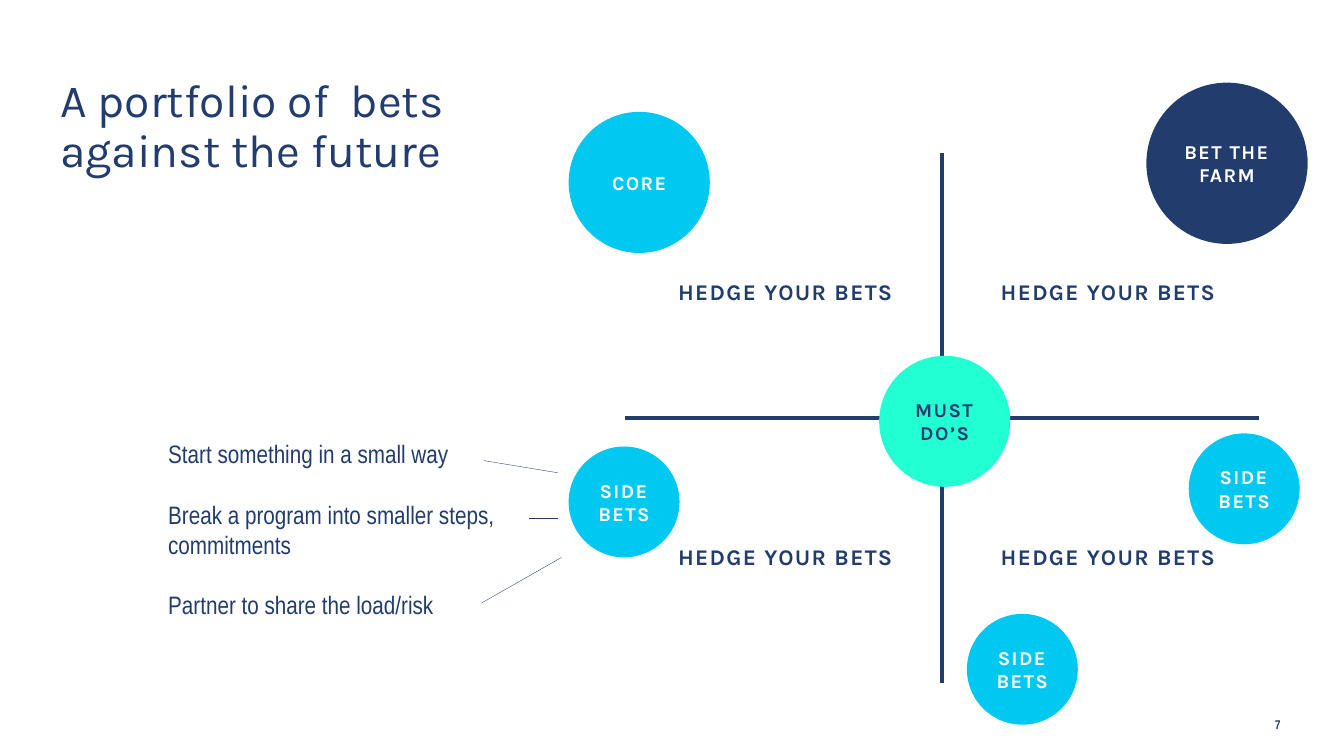
from dataclasses import dataclass
from itertools import product

from lxml.etree import SubElement
from pptx import Presentation
from pptx.dml.color import RGBColor as RGB
from pptx.enum.shapes import MSO_CONNECTOR as Link, MSO_SHAPE as Shape
from pptx.enum.text import MSO_ANCHOR as Anchor, PP_ALIGN as Align
from pptx.oxml.ns import qn
from pptx.util import Inches, Pt


@dataclass(frozen=True)
class Theme:
    navy: RGB = RGB(0x22, 0x3C, 0x6E)
    cyan: RGB = RGB(0x00, 0xC8, 0xF1)
    mint: RGB = RGB(0x22, 0xFF, 0xD2)
    white: RGB = RGB(0xFF, 0xFF, 0xFF)
    head: str = "Karla"
    body: str = "Arial Narrow"
    title: float = 33
    note: float = 18
    hedge: float = 16
    label: float = 14
    page: float = 9
    axis: float = 3
    hair: float = 0.25


THEME = Theme()


def write(frame, *lines, size, font=THEME.head, color=THEME.navy, bold=False,
          align=Align.LEFT, anchor=Anchor.TOP, inset=None, track=0,
          gap=0, lead=None):
    """Fill a text frame with one paragraph per line; track and gap are points."""
    frame.word_wrap = True
    frame.vertical_anchor = anchor
    if inset is not None:
        frame.margin_left = frame.margin_right = Inches(inset)
        frame.margin_top = frame.margin_bottom = Inches(inset)
    for i, line in enumerate(lines):
        para = frame.add_paragraph() if i else frame.paragraphs[0]
        para.text = line
        para.alignment = align
        para.space_after = Pt(gap)
        if lead:
            para.line_spacing = lead
        for run in para.runs:
            run.font.size = Pt(size)
            run.font.name = font
            run.font.bold = bold
            run.font.color.rgb = color
            if track:
                run._r.get_or_add_rPr().set("spc", str(track * 100))


def add_text(slide, box, *lines, **style):
    shape = slide.shapes.add_textbox(*map(Inches, box))
    write(shape.text_frame, *lines, **style)


def add_line(slide, start, end, width):
    line = slide.shapes.add_connector(Link.STRAIGHT, *map(Inches, start + end))
    line.line.color.rgb = THEME.navy
    line.line.width = Pt(width)
    SubElement(line._element.spPr, qn("a:effectLst"))


def add_bet(slide, left, top, size, text, fill, color=THEME.white):
    """Draw a round bet with its label inside."""
    disc = slide.shapes.add_shape(
        Shape.OVAL, *map(Inches, (left, top, size, size)))
    disc.shadow.inherit = False
    disc.fill.solid()
    disc.fill.fore_color.rgb = fill
    disc.line.fill.background()
    write(disc.text_frame, text, size=THEME.label, color=color, bold=True,
          align=Align.CENTER, anchor=Anchor.MIDDLE, inset=0, track=1)


def main():
    deck = Presentation()
    deck.slide_width, deck.slide_height = Inches(13.33), Inches(7.5)
    slide = deck.slides.add_slide(deck.slide_layouts[6])

    add_text(slide, (0.5, 0.72, 4.31, 2.87),
             "A portfolio of  bets against the future",
             size=THEME.title, lead=0.9)

    add_line(slide, (9.34, 1.52), (9.34, 6.78), THEME.axis)
    add_line(slide, (6.2, 4.15), (12.49, 4.15), THEME.axis)

    for left, top in product((6.49, 9.69), (2.72, 5.35)):
        add_text(slide, (left, top, 2.6, 0.35), "HEDGE YOUR BETS",
                 size=THEME.hedge, bold=True, align=Align.CENTER,
                 anchor=Anchor.MIDDLE, inset=0.04, track=1)

    add_bet(slide, 11.37, 0.82, 1.6, "BET THE FARM", THEME.navy)
    add_bet(slide, 5.64, 1.11, 1.4, "CORE", THEME.cyan)
    add_bet(slide, 8.72, 3.53, 1.3, "MUST DO’S", THEME.mint, THEME.navy)
    for left, top in ((11.79, 4.3), (9.59, 6.09), (5.64, 4.43)):
        add_bet(slide, left, top, 1.1, "SIDE\nBETS", THEME.cyan)

    add_text(slide, (1.57, 4.3, 3.96, 1.92),
             "Start something in a small way",
             "Break a program into smaller steps, commitments",
             "Partner to share the load/risk",
             size=THEME.note, font=THEME.body, gap=21.6)
    for start, end in (((5.53, 4.69), (4.8, 4.57)),
                       ((5.53, 5.14), (5.25, 5.14)),
                       ((5.57, 5.53), (4.78, 5.98))):
        add_line(slide, start, end, THEME.hair)

    add_text(slide, (12.05, 6.99, 0.75, 0.4), "7", size=THEME.page,
             font=THEME.body, bold=True, align=Align.RIGHT,
             anchor=Anchor.MIDDLE)

    deck.save("out.pptx")


if __name__ == "__main__":
    main()
